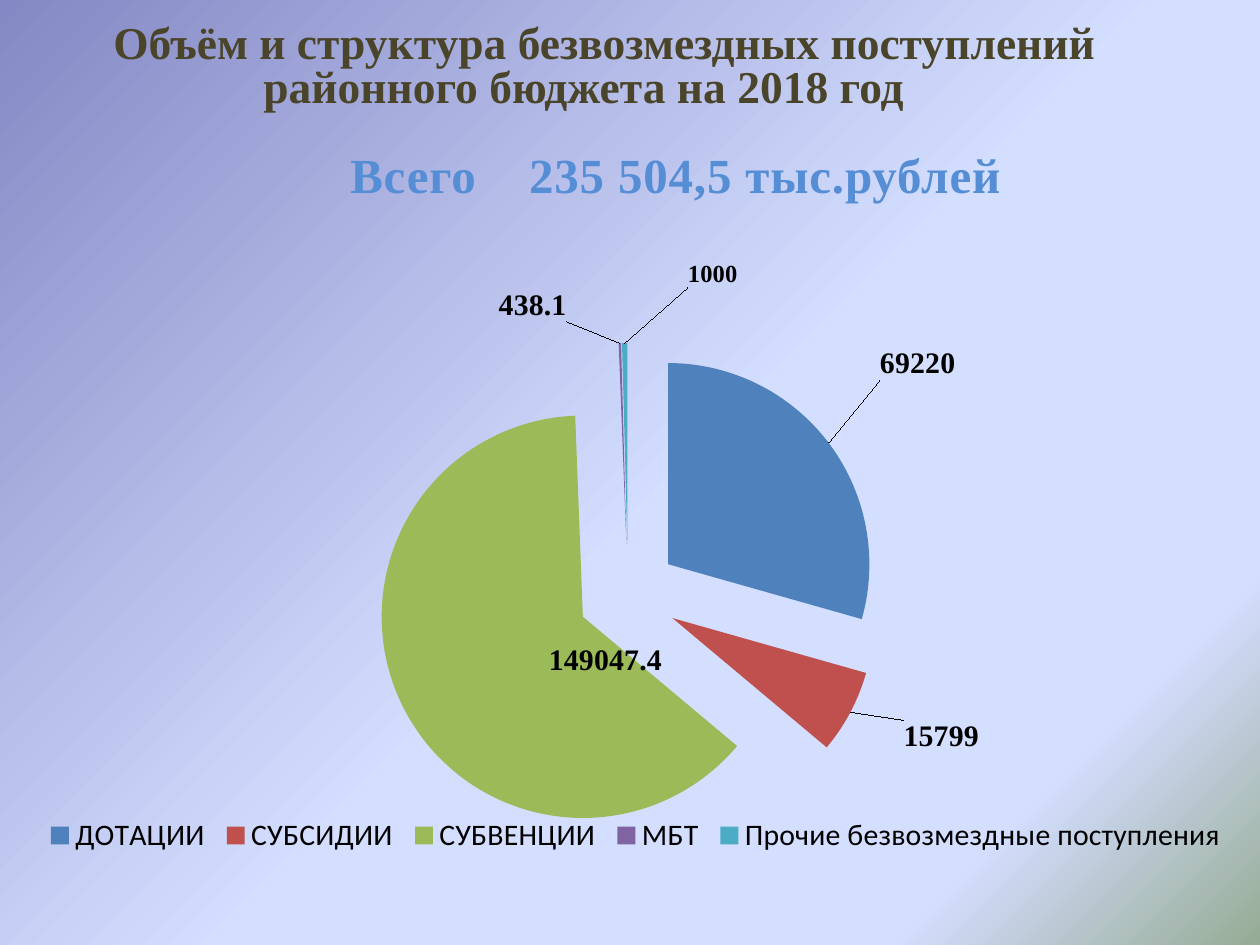
from lxml import etree
from pptx import Presentation
from pptx.chart.data import CategoryChartData
from pptx.dml.color import RGBColor
from pptx.enum.chart import XL_CHART_TYPE as CT, XL_LABEL_POSITION as LP, XL_LEGEND_POSITION as LEG
from pptx.oxml.ns import qn
from pptx.util import Inches, Pt

SERIF = "Times New Roman"
BACKGROUND = [(0, "8488C4"), (53, "D4DEFF"), (83, "D4DEFF"), (100, "96AB94")]
TITLE = [("Объём и структура безвозмездных поступлений", 27, [0.32]),
         ("районного бюджета на 2018 год", 25, [1.51])]
TOTAL = [("Всего\t235 504,5 тыс.рублей", 27, [2.29, 3.71])]
# name, value, colour, label size, label position, label offset
SLICES = [
    ("ДОТАЦИИ", 69220, "4F81BD", 17, LP.OUTSIDE_END, (0.035, -0.087)),
    ("СУБСИДИИ", 15799, "C0504D", 17, LP.OUTSIDE_END, (0.036, 0.007)),
    ("СУБВЕНЦИИ", 149047.4, "9BBB59", 17, LP.CENTER, (0.087, 0)),
    ("МБТ", 438.1, "8064A2", 17, LP.OUTSIDE_END, (-0.067, -0.021)),
    ("Прочие безвозмездные поступления", 1000, "4BACC6", 14, LP.OUTSIDE_END, (0.068, -0.072)),
]


def rgb(value):
    """Turn a hex string into a colour."""
    return RGBColor.from_string(value)


def set_font(font, color, **values):
    """Apply a colour and a dict of format values to a font."""
    font.color.rgb = rgb(color)
    for name, value in values.items():
        setattr(font, name, value)


def add_background(s):
    """Fill the slide with a diagonal gradient."""
    s.background.fill.gradient()
    grad = next(s.element.iter(qn("a:gradFill")))
    for child in list(grad):
        grad.remove(child)
    stops = etree.SubElement(grad, qn("a:gsLst"))
    for place, color in BACKGROUND:
        stop = etree.SubElement(stops, qn("a:gs"), pos=str(place * 1000))
        etree.SubElement(stop, qn("a:srgbClr"), val=color)
    etree.SubElement(grad, qn("a:lin"), ang="2700000", scaled="0")


def add_heading(s, box, lines, size, color, spacing=0):
    """Place lines of bold text, each starting at its first tab stop."""
    tf = s.shapes.add_textbox(*map(Inches, box)).text_frame
    tf.word_wrap = True
    for side in ("left", "top", "right", "bottom"):
        setattr(tf, "margin_" + side, 0)
    for i, (text, leading, tabs) in enumerate(lines):
        p = tf.paragraphs[0] if i == 0 else tf.add_paragraph()
        p.line_spacing = Pt(leading)
        stops = etree.SubElement(p._p.get_or_add_pPr(), qn("a:tabLst"))
        for tab in tabs:
            etree.SubElement(stops, qn("a:tab"), pos=str(Inches(tab)), algn="l")
        r = p.add_run()
        r.text = "\t" + text
        set_font(r.font, color, name=SERIF, size=Pt(size), bold=True)
        r._r.get_or_add_rPr().set("spc", str(spacing))


def set_layout(parent, after, **values):
    """Give a chart part a manual layout, put after the named child."""
    for old in parent.findall(qn("c:layout")):
        parent.remove(old)
    layout = etree.Element(qn("c:layout"))
    manual = etree.SubElement(layout, qn("c:manualLayout"))
    for name, value in values.items():
        etree.SubElement(manual, qn("c:" + name), val=str(value))
    if after:
        parent.find(qn(after)).addnext(layout)
    else:
        parent.insert(0, layout)


def add_pie(s, box):
    """Place the exploded pie with its labels and legend."""
    data = CategoryChartData()
    data.categories = [row[0] for row in SLICES]
    data.add_series("Series 1", [row[1] for row in SLICES])
    chart = s.shapes.add_chart(CT.PIE, *map(Inches, box), data).chart
    chart.has_title = False
    set_font(chart.font, "000000", name="Calibri", size=Pt(17))
    chart.has_legend = True
    legend = chart.legend
    legend.position = LEG.BOTTOM
    legend.include_in_layout = False
    set_layout(legend._element, "c:legendPos", xMode="edge", yMode="edge",
               x=0.03, y=0.89, w=0.92, h=0.07)
    plot = chart.plots[0]
    plot.vary_by_categories = True
    set_layout(plot._element.getparent(), None, layoutTarget="inner", xMode="edge",
               yMode="edge", x=0.062, y=0.189, w=0.844, h=0.752)
    series = plot.series[0]
    series.data_labels.show_value = True
    explosion = etree.Element(qn("c:explosion"), val="25")
    series._element.find(qn("c:tx")).addnext(explosion)
    for i, (_, _, color, size, position, (dx, dy)) in enumerate(SLICES):
        point = series.points[i]
        point.format.fill.solid()
        point.format.fill.fore_color.rgb = rgb(color)
        label = point.data_label
        set_font(label.font, "000000", name=SERIF, size=Pt(size), bold=True)
        label.position = position
        element = series.data_labels._element.findall(qn("c:dLbl"))[i]
        set_layout(element, "c:idx", x=dx, y=dy)


def main():
    """Build the slide."""
    prs = Presentation()
    prs.slide_width, prs.slide_height = Inches(10), Inches(7.5)
    s = prs.slides.add_slide(prs.slide_layouts[6])
    add_background(s)
    add_heading(s, (0.58, 0.17, 8.62, 1.55), TITLE, 26, "4A452A")
    add_heading(s, (0.49, 1.24, 9.5, 1.2), TOTAL, 28, "558ED5", 50)
    add_pie(s, (0, 1.72, 10.3, 5.31))
    prs.save("out.pptx")


if __name__ == "__main__":
    main()
